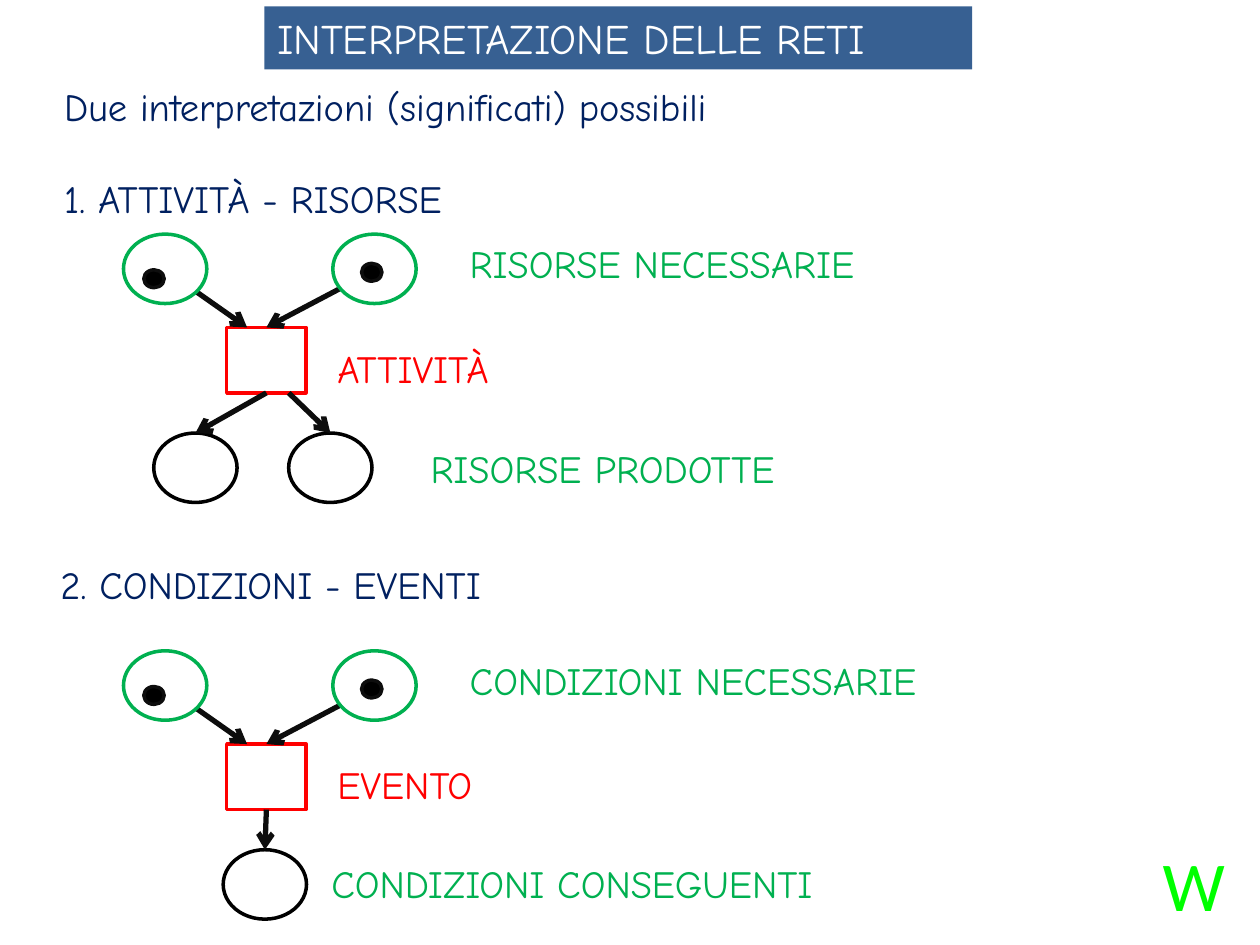
from lxml import etree
from pptx import Presentation
from pptx.dml.color import RGBColor
from pptx.enum import shapes, text
from pptx.oxml.ns import qn
from pptx.util import Cm, Pt

WHITE = RGBColor(0xFF, 0xFF, 0xFF)
BLACK = RGBColor(0, 0, 0)
INK = RGBColor(0x0D, 0x0D, 0x0D)
BLUE = RGBColor(0x37, 0x60, 0x92)
NAVY = RGBColor(0x00, 0x20, 0x60)
RED = RGBColor(0xFF, 0, 0)
GREEN = RGBColor(0x00, 0xB0, 0x50)
LIME = RGBColor(0, 0xFF, 0)

OVAL = shapes.MSO_SHAPE.OVAL
RECT = shapes.MSO_SHAPE.RECTANGLE

prs = Presentation()
prs.slide_width, prs.slide_height = Cm(25.4), Cm(19.05)
s = prs.slides.add_slide(prs.slide_layouts[1])


def node(kind, x, y, w, h, line, fill=None):
    sp = s.shapes.add_shape(kind, Cm(x), Cm(y), Cm(w), Cm(h))
    sp.shadow.inherit = False
    if fill is None:
        sp.fill.background()
    else:
        sp.fill.solid()
        sp.fill.fore_color.rgb = fill
    sp.line.color.rgb = line
    sp.line.width = Pt(2)
    return sp


def arrow(x1, y1, x2, y2):
    c = s.shapes.add_connector(shapes.MSO_CONNECTOR.STRAIGHT,
                               Cm(x1), Cm(y1), Cm(x2), Cm(y2))
    c.line.color.rgb = INK
    c.line.width = Pt(3)
    etree.SubElement(c.line._get_or_add_ln(), qn("a:tailEnd"), type="arrow")
    etree.SubElement(c._element.spPr, qn("a:effectLst"))
    return c


# Title
title = s.shapes.title
title.left, title.top, title.width, title.height = Cm(5.33), Cm(0.13), Cm(14.27), Cm(1.27)
title.fill.solid()
title.fill.fore_color.rgb = BLUE
title.text_frame.text = "INTERPRETAZIONE DELLE RETI"
title.text_frame.auto_size = text.MSO_AUTO_SIZE.NONE
p = title.text_frame.paragraphs[0]
p.alignment = text.PP_ALIGN.LEFT
r = p.runs[0]
r.font.size, r.font.name, r.font.color.rgb = Pt(24), "Comic Neue", WHITE

# Introduction and first heading
body = s.placeholders[1]
body.left, body.top, body.width, body.height = Cm(1.04), Cm(1.55), Cm(23.93), Cm(3.07)
tf = body.text_frame
tf.text = "Due interpretazioni (significati) possibili\n1. ATTIVITÀ - RISORSE"
tf.auto_size = text.MSO_AUTO_SIZE.NONE
for p, gap in zip(tf.paragraphs, (0, 26)):
    p.space_before = Pt(gap)
    pPr = p._p.get_or_add_pPr()
    pPr.set("marL", "0")
    pPr.set("indent", "0")
    etree.SubElement(pPr, qn("a:buNone"))
    r = p.runs[0]
    r.font.size, r.font.name, r.font.color.rgb = Pt(22), "Comic Neue", NAVY

# The two nets: vertical offset, left edges of the output places
for dy, outputs in ((0, (3.1, 5.82)), (8.4, (4.5,))):
    box = node(RECT, 4.57, 6.6 + dy, 1.6, 1.32, RED, WHITE)

    # Arrows into the box
    arrow(3.33, 5.44 + dy, 4.98, 6.6 + dy)
    arrow(7.57, 5.44 + dy, 5.37, 6.6 + dy).end_connect(box, 0)

    # Input places with their tokens
    for x, token_x, token_y in ((2.49, 2.9, 5.44), (6.71, 7.29, 5.31)):
        node(OVAL, x, 4.72 + dy, 1.68, 1.4, GREEN, WHITE)
        node(OVAL, token_x, token_y + dy, 0.41, 0.36, INK, BLACK)

    # Output places; the first hangs from the middle of the box
    for i, x in enumerate(outputs):
        place = node(OVAL, x, 8.73 + dy, 1.68, 1.4, BLACK)
        c = arrow(5.82, 7.92 + dy, x + 0.84, 8.73 + dy)
        if i == 0:
            c.begin_connect(box, 2)
        c.end_connect(place, 0)

# Labels, second heading and corner letter
for words, x, y, w, color, size, font in (
    ("RISORSE NECESSARIE", 9.22, 4.72, 9.88, GREEN, 22, "Comic Neue"),
    ("ATTIVITÀ", 6.55, 6.83, 4.8, RED, 22, "Comic Neue"),
    ("RISORSE PRODOTTE", 8.43, 8.84, 9.88, GREEN, 22, "Comic Neue"),
    ("2. CONDIZIONI - EVENTI", 0.97, 11.18, 23.93, NAVY, 22, "Comic Neue"),
    ("CONDIZIONI NECESSARIE", 9.22, 13.13, 14.27, GREEN, 22, "Comic Neue"),
    ("EVENTO", 6.55, 15.21, 4.8, RED, 22, "Comic Neue"),
    ("CONDIZIONI CONSEGUENTI", 6.43, 17.22, 13.16, GREEN, 22, "Comic Neue"),
    ("W", 23.19, 16.84, 1.78, LIME, 40, "Calibri"),
):
    sp = s.shapes.add_textbox(Cm(x), Cm(y), Cm(w), Cm(1.19 if size == 22 else 1.96))
    tf = sp.text_frame
    tf.word_wrap = True
    tf.text = words
    r = tf.paragraphs[0].runs[0]
    r.font.size, r.font.name, r.font.color.rgb = Pt(size), font, color

prs.save("out.pptx")
